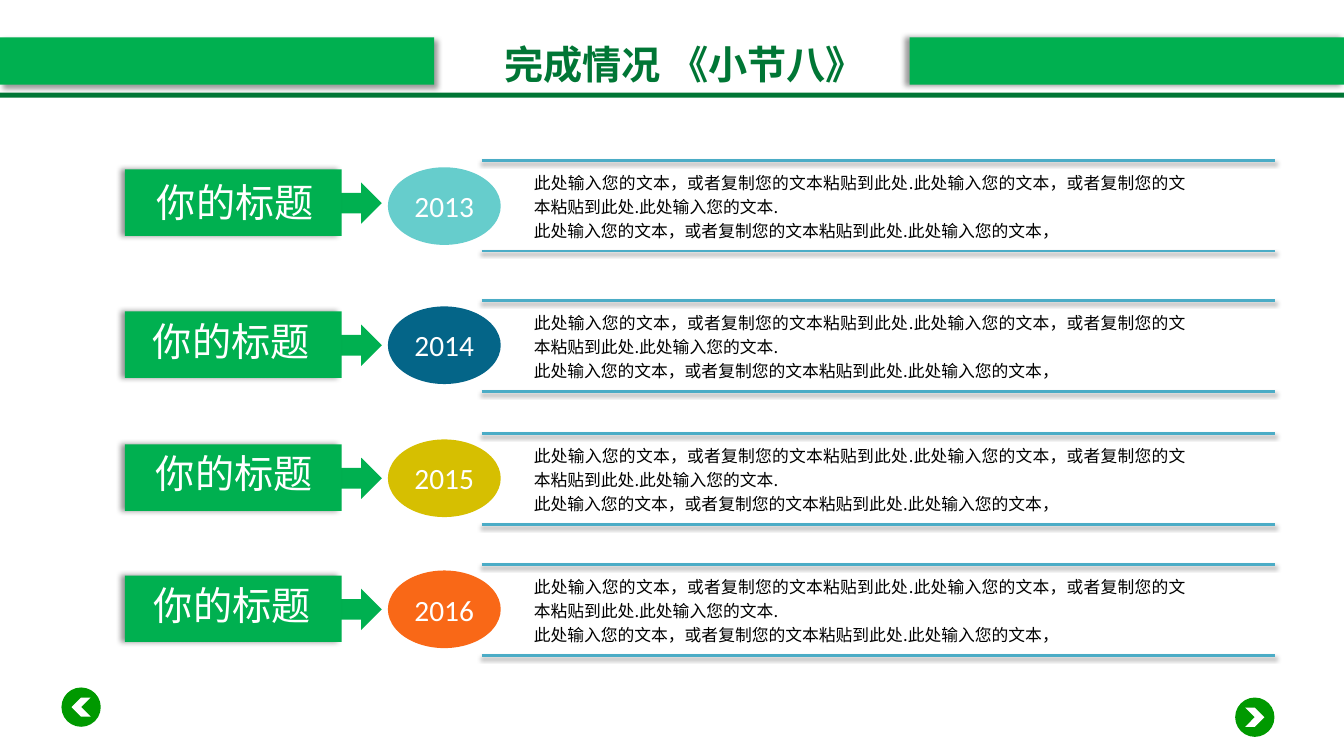
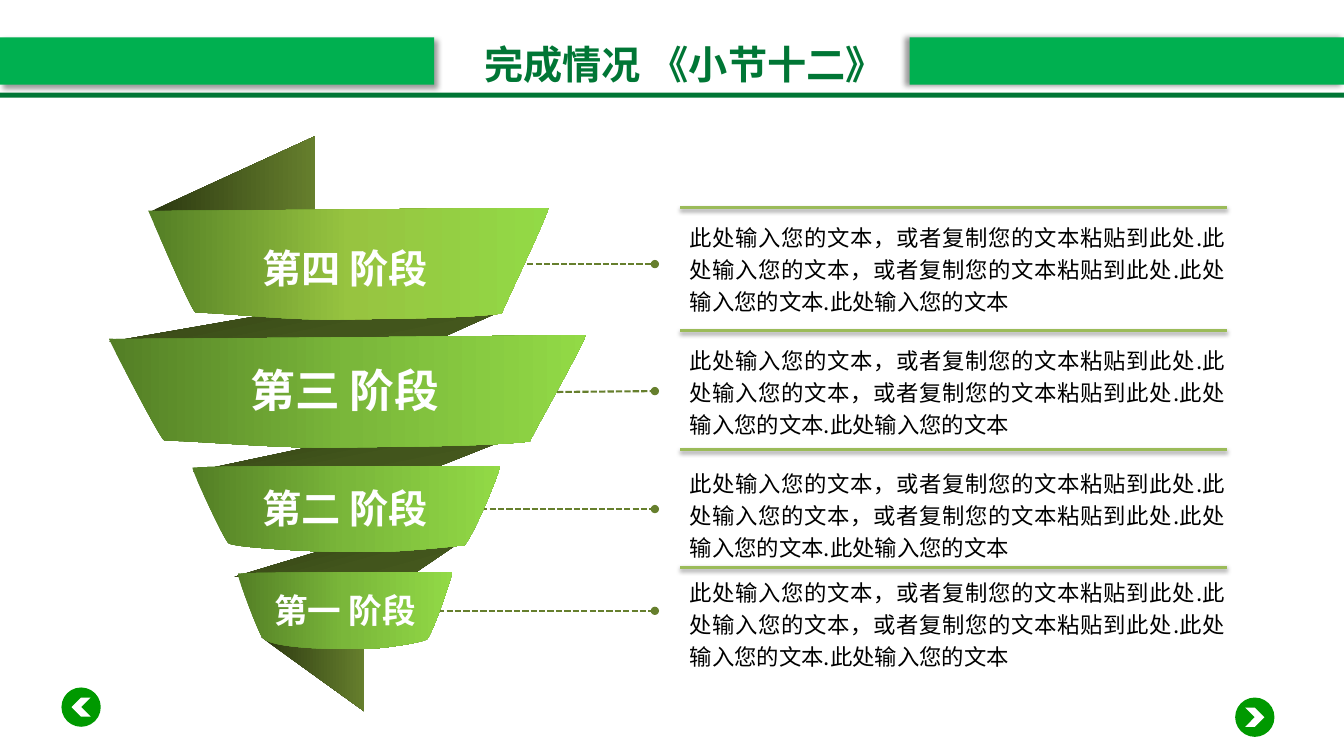
from math import cos, radians, sin

from lxml.etree import SubElement
from pptx import Presentation
from pptx.dml.color import RGBColor
from pptx.enum.dml import MSO_LINE
from pptx.enum.shapes import MSO_CONNECTOR, MSO_SHAPE
from pptx.enum.text import MSO_ANCHOR, MSO_AUTO_SIZE, PP_ALIGN
from pptx.oxml.ns import qn
from pptx.util import Inches, Pt

SLIDE_WIDTH, SLIDE_HEIGHT = 13.34, 7.5
GREEN, DARK_GREEN, BUTTON_GREEN = "00B050", "007635", "009900"
WHITE, BLACK = "FFFFFF", "000000"
BLUE_RULE, OLIVE_RULE, OLIVE = "4BACC6", "9BBB59", "667F2D"
CJK_FONT, LATIN_FONT = "Noto Sans CJK SC", "Calibri"

RIGHT_SHADOW = (40, 4, 3, 45)
LEFT_SHADOW = (40, 4, 3, 180)
RULE_SHADOW = (38, 3.1, 1.6, 90)

TAIL_GRADIENT = [(0, "2B3810"), (100, OLIVE)]
FOLD_GRADIENT = [(0, "2B3810"), (50, "42551C"), (100, "516624")]
BAND_GRADIENT = [(0, "537E25"), (50, "7AB73A"), (100, "92DA46")]
TOP_BAND_GRADIENT = [(0, "537E25"), (50, "97C440"), (100, "92DA46")]

SENTENCE = "此处输入您的文本，或者复制您的文本粘贴到此处."
YEAR_TEXT = [SENTENCE * 2 + "此处输入您的文本.", SENTENCE + "此处输入您的文本，"]
STAGE_TEXT = [SENTENCE * 2 + "此处输入您的文本.此处输入您的文本"]

YEARS = [
    ("2013", "66CDCC", 1.59, 1.68, 1.66, (1.46, 1.72)),
    ("2014", "046588", 2.98, 3.09, 3.04, (1.42, 3.1)),
    ("2015", "D6BF01", 4.3, 4.41, 4.36, (1.45, 4.41)),
    ("2016", "F96817", 5.6, 5.71, 5.66, (1.43, 5.72)),
]
STAGE_NOTES = [(2.06, 2.12), (3.28, 3.34), (4.46, 4.56), (5.63, 5.64)]
LEADERS = [
    ((5.03, 2.62), (6.5, 2.62)),
    ((5.41, 3.89), (6.5, 3.88)),
    ((4.49, 5.05), (6.5, 5.05)),
    ((4.23, 6.06), (6.5, 6.06)),
]
TAILS = [
    [(2.59, 6.32), (3.62, 7.06), (3.62, 6.32)],
    [(1.49, 2.1), (3.13, 1.35), (3.13, 2.1)],
]
FOLDS = [
    (-15.5, (3.49, 5.63), [(2.33, 5.72), (3.59, 5.34), (4.61, 5.35), (4.02, 5.75)]),
    (-11.2, (3.49, 4.58), [(1.92, 4.68), (3.76, 4.29), (5.03, 4.36), (4.27, 4.66)]),
    (-11.5, (3.06, 3.34), [(1.09, 3.39), (3.45, 2.98), (4.99, 3.08), (4.05, 3.5)]),
]
BANDS = [
    (BAND_GRADIENT, [
        (1.08, 3.36), (1.08, 3.37), (5.78, 3.33), (5.81, 3.32),
        (5.85, 3.32), (5.25, 4.37), (5.26, 4.38),
        (4.82, 4.43), (4, 4.43), (3.38, 4.44),
        (2.75, 4.45), (2.21, 4.39), (1.63, 4.37),
        (1.58, 4.34), (1.07, 3.35), (1.08, 3.36)]),
    (BAND_GRADIENT, [
        (1.91, 4.64), (1.93, 4.62), (4.94, 4.62), (4.96, 4.62),
        (4.99, 4.61), (4.72, 5.28), (4.61, 5.41),
        (4.58, 5.41), (3.95, 5.49), (3.47, 5.48),
        (3, 5.47), (2.33, 5.43), (2.27, 5.39),
        (2.23, 5.37), (1.9, 4.66), (1.91, 4.64)]),
    (BAND_GRADIENT, [
        (2.36, 5.69), (2.37, 5.68), (4.47, 5.67), (4.49, 5.67),
        (4.5, 5.67), (4.32, 6.23), (4.24, 6.34),
        (4.21, 6.37), (3.76, 6.45), (3.51, 6.44),
        (3.27, 6.44), (2.7, 6.43), (2.61, 6.33),
        (2.58, 6.32), (2.35, 5.71), (2.36, 5.69)]),
    (TOP_BAND_GRADIENT, [
        (1.47, 2.09), (1.48, 2.1), (5.41, 2.06), (5.44, 2.06),
        (5.48, 2.05), (4.97, 3.11), (4.98, 3.11),
        (4.61, 3.16), (3.92, 3.16), (3.4, 3.17),
        (2.87, 3.18), (2.42, 3.12), (1.94, 3.1),
        (1.89, 3.07), (1.47, 2.08), (1.47, 2.09)]),
]
STAGE_NAMES = [
    ("第一 阶段", 24, (2.6, 5.8, 1.65, 0.5)),
    ("第二 阶段", 28, (2.48, 4.76, 1.89, 0.57)),
    ("第三 阶段", 32, (2.36, 3.55, 2.13, 0.64)),
    ("第四 阶段", 28, (2.48, 2.37, 1.89, 0.57)),
]


def color(value):
    """Return the colour of a hex string."""
    return RGBColor.from_string(value)


def set_shadow(shape, shadow=None):
    """Give a shape an outer shadow, or none at all."""
    effects = SubElement(shape.element.spPr, qn("a:effectLst"))
    if shadow:
        alpha, blur, distance, angle = shadow
        outer = SubElement(effects, qn("a:outerShdw"), blurRad=str(Pt(blur)),
                           dist=str(Pt(distance)), dir=str(angle * 60000),
                           algn="ctr", rotWithShape="0")
        black = SubElement(outer, qn("a:srgbClr"), val=BLACK)
        SubElement(black, qn("a:alpha"), val=str(alpha * 1000))


def write_text(shape, lines, size, text_color, bold=False, font=CJK_FONT,
               alignment=PP_ALIGN.CENTER, spacing=None):
    """Write paragraphs into a shape and format their runs."""
    shape.text_frame.text = "\n".join(lines)
    for paragraph in shape.text_frame.paragraphs:
        paragraph.alignment = alignment
        paragraph.line_spacing = spacing
        for run in paragraph.runs:
            run.font.size = Pt(size)
            run.font.bold = bold
            run.font.color.rgb = color(text_color)
            run.font.name = font
            SubElement(run._r.get_or_add_rPr(), qn("a:ea"), typeface=font)


def write_label(shape, text, size, text_color=WHITE, bold=False, font=CJK_FONT):
    """Centre one unwrapped line in a shape without margins."""
    frame = shape.text_frame
    frame.margin_left = frame.margin_right = 0
    frame.margin_top = frame.margin_bottom = 0
    frame.vertical_anchor = MSO_ANCHOR.MIDDLE
    frame.auto_size = MSO_AUTO_SIZE.NONE
    frame.word_wrap = False
    write_text(shape, [text], size, text_color, bold, font)


def add_filled_shape(shapes, kind, left, top, width, height, fill, shadow=None):
    """Add a preset shape with a plain fill and no outline."""
    shape = shapes.add_shape(kind, Inches(left), Inches(top),
                             Inches(width), Inches(height))
    shape.fill.solid()
    shape.fill.fore_color.rgb = color(fill)
    shape.line.fill.background()
    set_shadow(shape, shadow)
    return shape


def add_text_box(slide, left, top, width, height, wrap=True):
    """Add an empty text box."""
    box = slide.shapes.add_textbox(Inches(left), Inches(top),
                                   Inches(width), Inches(height))
    box.text_frame.word_wrap = wrap
    return box


def add_body(slide, left, top, width, height, lines, size):
    """Add a justified block of body text."""
    box = add_text_box(slide, left, top, width, height)
    write_text(box, lines, size, BLACK, alignment=PP_ALIGN.JUSTIFY, spacing=1.2)


def add_line(slide, start, end, line_color, width):
    """Add a straight coloured connector."""
    line = slide.shapes.add_connector(
        MSO_CONNECTOR.STRAIGHT, *(Inches(value) for value in start + end))
    line.line.color.rgb = color(line_color)
    line.line.width = Pt(width)
    return line


def add_rule(slide, left, right, y, line_color):
    """Add a horizontal rule with a soft shadow."""
    set_shadow(add_line(slide, (left, y), (right, y), line_color, 2), RULE_SHADOW)


def add_leader(slide, start, end):
    """Add a dashed leader with a dot at both ends."""
    leader = add_line(slide, start, end, OLIVE, 1.5)
    leader.line.dash_style = MSO_LINE.SQUARE_DOT
    outline = leader.element.spPr.find(qn("a:ln"))
    for tag in ("a:headEnd", "a:tailEnd"):
        SubElement(outline, qn(tag), type="oval")
    set_shadow(leader)


def add_outline(slide, points, stops, angle=0):
    """Add a closed freeform with a linear gradient."""
    corners = [(Inches(x), Inches(y)) for x, y in points]
    builder = slide.shapes.build_freeform(*corners[0])
    builder.add_line_segments(corners[1:], close=True)
    shape = builder.convert_to_shape()
    shape.fill.gradient()
    shape.fill.gradient_angle = angle
    stop_list = next(shape.element.spPr.iter(qn("a:gsLst")))
    stop_list.clear()
    for position, stop_color in stops:
        stop = SubElement(stop_list, qn("a:gs"), pos=str(position * 1000))
        SubElement(stop, qn("a:srgbClr"), val=stop_color)
    shape.line.fill.background()
    set_shadow(shape)
    return shape


def curve_outline(shape):
    """Join each three straight segments of a freeform into one cubic curve."""
    segments = list(shape.element.spPr.iter(qn("a:lnTo")))
    outline = segments[0].getparent()
    for index in range(0, len(segments) - 2, 3):
        curve = SubElement(outline, qn("a:cubicBezTo"))
        segments[index].addprevious(curve)
        for segment in segments[index:index + 3]:
            curve.append(segment[0])
            outline.remove(segment)


def turn(point, center, degrees):
    """Rotate a point clockwise around a centre."""
    x, y = point[0] - center[0], point[1] - center[1]
    cosine, sine = cos(radians(degrees)), sin(radians(degrees))
    return center[0] + x * cosine - y * sine, center[1] + x * sine + y * cosine


def add_button(slide, left, top, rotation):
    """Add a round navigation button with a chevron."""
    group = slide.shapes.add_group_shape()
    add_filled_shape(group.shapes, MSO_SHAPE.OVAL, left, top, 0.39, 0.39, BUTTON_GREEN)
    chevron = add_filled_shape(group.shapes, MSO_SHAPE.CHEVRON,
                               left + 0.1, top + 0.1, 0.19, 0.19, WHITE)
    chevron.rotation = rotation


def move_frame_to_layout(slide):
    """Draw the bands and buttons once and keep them on the layout."""
    rectangle = MSO_SHAPE.RECTANGLE
    add_filled_shape(slide.shapes, rectangle, 0, 0.37, 4.31, 0.47, GREEN, RIGHT_SHADOW)
    add_filled_shape(slide.shapes, rectangle, 0, 0.92, SLIDE_WIDTH, 0.05, DARK_GREEN)
    add_filled_shape(slide.shapes, rectangle, 9.03, 0.37, 4.31, 0.47, GREEN, LEFT_SHADOW)
    add_button(slide, 0.61, 6.82, 180)
    add_button(slide, 12.26, 6.92, 0)
    tree = slide.slide_layout.shapes.element
    for shape in list(slide.shapes):
        if not shape.is_placeholder:
            tree.append(shape.element)
    for number, properties in enumerate(tree.iter(qn("p:cNvPr")), 1):
        properties.set("id", str(number))


def add_title(slide, text):
    """Place and format the slide title between the bands."""
    title = slide.shapes.title
    title.left, title.top = Inches(4.67), Inches(0.35)
    title.width, title.height = Inches(4.25), Inches(0.57)
    write_label(title, text, 28, DARK_GREEN, bold=True)


def add_year_row(slide, year, fill, rule_top, box_top, oval_top, label_place):
    """Add one row: heading box, arrow, year and text between rules."""
    shapes = slide.shapes
    add_body(slide, 5.2, rule_top + 0.03, 6.67, 0.83, YEAR_TEXT, 12)
    oval = add_filled_shape(shapes, MSO_SHAPE.OVAL, 3.85, oval_top, 1.12, 0.77, fill)
    write_label(oval, year, 21, font=LATIN_FONT)
    add_filled_shape(shapes, MSO_SHAPE.RIGHT_ARROW, 3.28, box_top + 0.13, 0.51, 0.41, GREEN)
    add_filled_shape(shapes, MSO_SHAPE.RECTANGLE, 1.24, box_top, 2.15, 0.66,
                     GREEN, LEFT_SHADOW)
    label = add_text_box(slide, *label_place, 1.8, 0.57)
    write_text(label, ["你的标题"], 28, WHITE, alignment=PP_ALIGN.LEFT)
    for y in (rule_top, rule_top + 0.9):
        add_rule(slide, 4.78, 12.66, y, BLUE_RULE)


def add_spiral(slide):
    """Add the spiral ribbon with its leaders and stage names."""
    for start, end in LEADERS:
        add_leader(slide, start, end)
    for points in TAILS:
        add_outline(slide, points, TAIL_GRADIENT)
    for rotation, center, points in FOLDS:
        level = [turn(point, center, -rotation) for point in points]
        add_outline(slide, level, FOLD_GRADIENT, 270).rotation = rotation
    for stops, points in BANDS:
        curve_outline(add_outline(slide, points, stops))
    for name, size, place in STAGE_NAMES:
        write_text(add_text_box(slide, *place, wrap=False), [name], size, WHITE, bold=True)


def main():
    """Build both slides and save them."""
    presentation = Presentation()
    presentation.slide_width = Inches(SLIDE_WIDTH)
    presentation.slide_height = Inches(SLIDE_HEIGHT)
    layout = presentation.slide_layouts[5]

    years_slide = presentation.slides.add_slide(layout)
    move_frame_to_layout(years_slide)
    add_title(years_slide, "完成情况 《小节八》")
    for row in YEARS:
        add_year_row(years_slide, *row)

    stages_slide = presentation.slides.add_slide(layout)
    add_title(stages_slide, "完成情况 《小节十二》")
    add_spiral(stages_slide)
    for rule_y, text_top in STAGE_NOTES:
        add_body(stages_slide, 6.75, text_top, 5.51, 1.05, STAGE_TEXT, 16)
        add_rule(stages_slide, 6.75, 12.18, rule_y, OLIVE_RULE)

    presentation.save("out.pptx")


if __name__ == "__main__":
    main()
